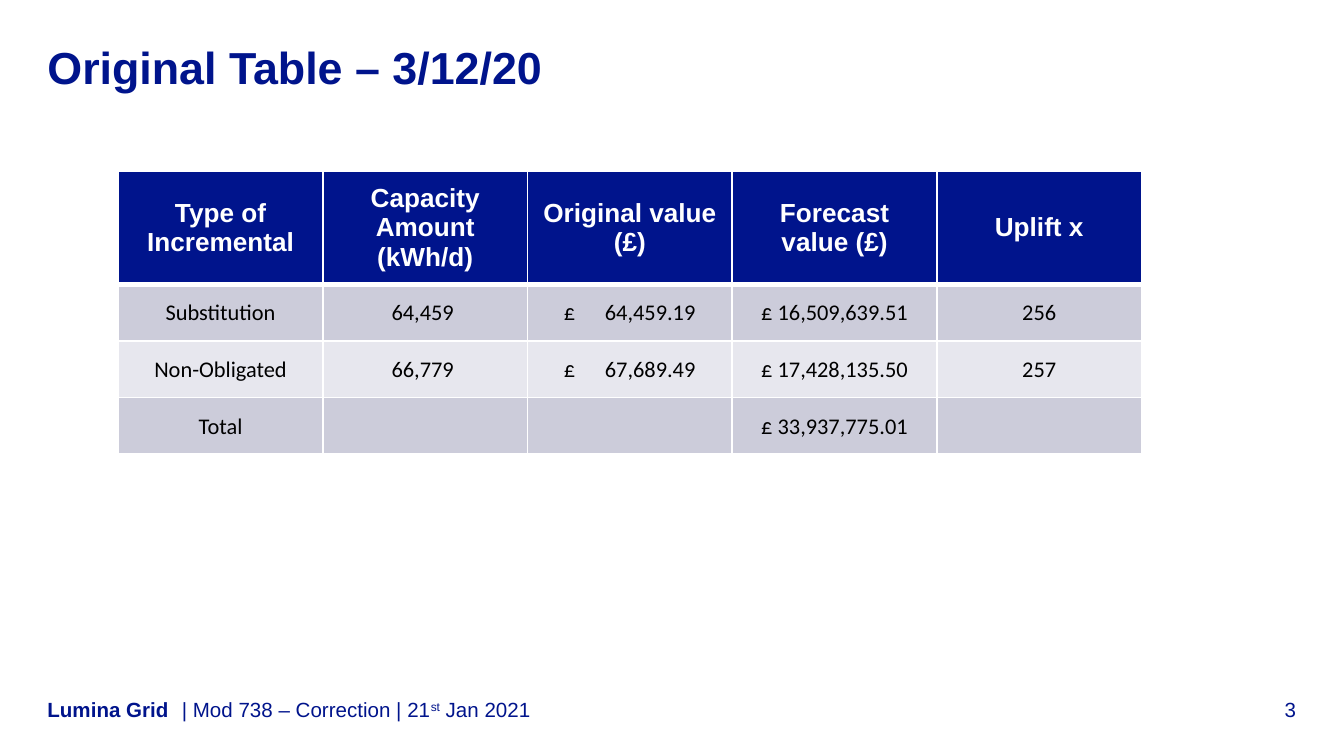
from dataclasses import dataclass

from lxml.etree import SubElement
from pptx import Presentation
from pptx.dml.color import RGBColor
from pptx.enum.text import MSO_ANCHOR as Anchor, PP_ALIGN as Align
from pptx.oxml.ns import qn
from pptx.util import Inches, Pt


@dataclass(frozen=True)
class Theme:
    """Colours, fonts and type sizes of the slide."""
    navy: str = "00148C"
    white: str = "FFFFFF"
    black: str = "000000"
    bands: tuple = ("CCCCDA", "E7E7EE")
    font: str = "Arial"
    body_font: str = "Calibri"
    title: int = 24
    header: int = 14
    body: int = 12
    footer: int = 11


THEME = Theme()
WIDTH = Inches(10)
HEIGHT = WIDTH * 9 // 16
FOOTER_TOP, FOOTER_HEIGHT = 92.1, 3.38
TABLE_LEFT, TABLE_TOP, COLUMN_WIDTH = 8.8, 22.65, 15.23
HEADER_HEIGHT, ROW_HEIGHT = 14.93, 7.5
POUND_INSET, AMOUNT_TAB = 2.7, 9.8
ROWS = [
    ["Type of Incremental", "Capacity Amount (kWh/d)", "Original value (£)",
     "Forecast value (£)", "Uplift x"],
    ["Substitution", "64,459 ", "£\t64,459.19", " £ 16,509,639.51 ", "256"],
    ["Non-Obligated", "66,779 ", "£\t67,689.49", " £ 17,428,135.50 ", "257"],
    ["Total", "", "", " £ 33,937,775.01 ", ""],
]


def across(percent):
    """Return a share of the slide's width."""
    return round(WIDTH * percent / 100)


def down(percent):
    """Return a share of the slide's height."""
    return round(HEIGHT * percent / 100)


def write(paragraph, text, *, size, font=THEME.font, color=THEME.navy, bold=False,
          align=Align.LEFT, after=0, raised=False):
    """Add a formatted run to a paragraph."""
    paragraph.alignment = align
    paragraph.space_after = Pt(after)
    run = paragraph.add_run()
    run.text = text
    run.font.size = Pt(size)
    run.font.name = font
    run.font.bold = bold
    run.font.color.rgb = RGBColor.from_string(color)
    if raised:
        run._r.get_or_add_rPr().set("baseline", "30000")


def add_label(slide, left, top, width, height, anchor=Anchor.BOTTOM):
    """Add a text box without margins and return its paragraph."""
    shape = slide.shapes.add_textbox(across(left), down(top), across(width), down(height))
    frame = shape.text_frame
    frame.word_wrap = True
    frame.vertical_anchor = anchor
    frame.margin_left = frame.margin_right = frame.margin_top = frame.margin_bottom = 0
    return frame.paragraphs[0]


def set_borders(cell, top, bottom):
    """Draw white cell borders with the given top and bottom weights."""
    properties = cell._tc.get_or_add_tcPr()
    for side, weight in (("L", 1), ("R", 1), ("T", top), ("B", bottom)):
        line = SubElement(properties, qn(f"a:ln{side}"), w=str(Pt(weight)))
        fill = SubElement(line, qn("a:solidFill"))
        SubElement(fill, qn("a:srgbClr"), val=THEME.white)


def add_amount_tab(paragraph):
    """Add the right tab that lines up the amounts after the pound sign."""
    tabs = SubElement(paragraph._p.get_or_add_pPr(), qn("a:tabLst"))
    SubElement(tabs, qn("a:tab"), pos=str(across(AMOUNT_TAB)), algn="r")


def fill_cell(cell, text, row):
    """Style one table cell and write its text."""
    is_header = row == 0
    set_borders(cell, top=3 if row == 1 else 1, bottom=3 if is_header else 1)
    cell.fill.solid()
    color = THEME.navy if is_header else THEME.bands[(row - 1) % 2]
    cell.fill.fore_color.rgb = RGBColor.from_string(color)
    cell.vertical_anchor = Anchor.MIDDLE
    paragraph = cell.text_frame.paragraphs[0]
    if is_header:
        write(paragraph, text, size=THEME.header, color=THEME.white, bold=True,
              align=Align.CENTER, after=6)
        return
    cell.margin_left = cell.margin_right = cell.margin_top = Inches(0.01)
    cell.margin_bottom = 0
    align = Align.CENTER
    if "\t" in text:
        cell.margin_left = across(POUND_INSET)
        add_amount_tab(paragraph)
        align = Align.LEFT
    if text:
        write(paragraph, text, size=THEME.body, font=THEME.body_font,
              color=THEME.black, align=align, after=6)


def add_values_table(slide):
    """Add the table of capacity types and values."""
    columns = len(ROWS[0])
    height = HEADER_HEIGHT + ROW_HEIGHT * (len(ROWS) - 1)
    table = slide.shapes.add_table(
        len(ROWS), columns, across(TABLE_LEFT), down(TABLE_TOP),
        across(COLUMN_WIDTH * columns), down(height)).table
    for column in table.columns:
        column.width = across(COLUMN_WIDTH)
    for index, texts in enumerate(ROWS):
        table.rows[index].height = down(ROW_HEIGHT if index else HEADER_HEIGHT)
        for column, text in enumerate(texts):
            fill_cell(table.cell(index, column), text, index)


def add_footer(slide):
    """Add the page number, the company name and the document reference."""
    number = add_label(slide, 90.6, FOOTER_TOP, 5.83, FOOTER_HEIGHT)
    write(number, "3", size=THEME.footer, align=Align.RIGHT)
    company = add_label(slide, 3.53, FOOTER_TOP, 10, FOOTER_HEIGHT)
    write(company, "Lumina Grid", size=THEME.footer, bold=True)
    reference = add_label(slide, 13.53, FOOTER_TOP, 78.7, FOOTER_HEIGHT)
    for text, raised in (("| Mod 738 – Correction | 21", False), ("st", True),
                         (" Jan 2021", False)):
        write(reference, text, size=THEME.footer, after=6, raised=raised)


def main():
    """Build and save the slide."""
    presentation = Presentation()
    presentation.slide_width, presentation.slide_height = WIDTH, HEIGHT
    slide = presentation.slides.add_slide(presentation.slide_layouts[6])
    add_footer(slide)
    title = add_label(slide, 3.53, 5.2, 92.9, 8.72, anchor=Anchor.TOP)
    write(title, "Original Table – 3/12/20", size=THEME.title, bold=True)
    add_values_table(slide)
    presentation.save("out.pptx")


if __name__ == "__main__":
    main()
